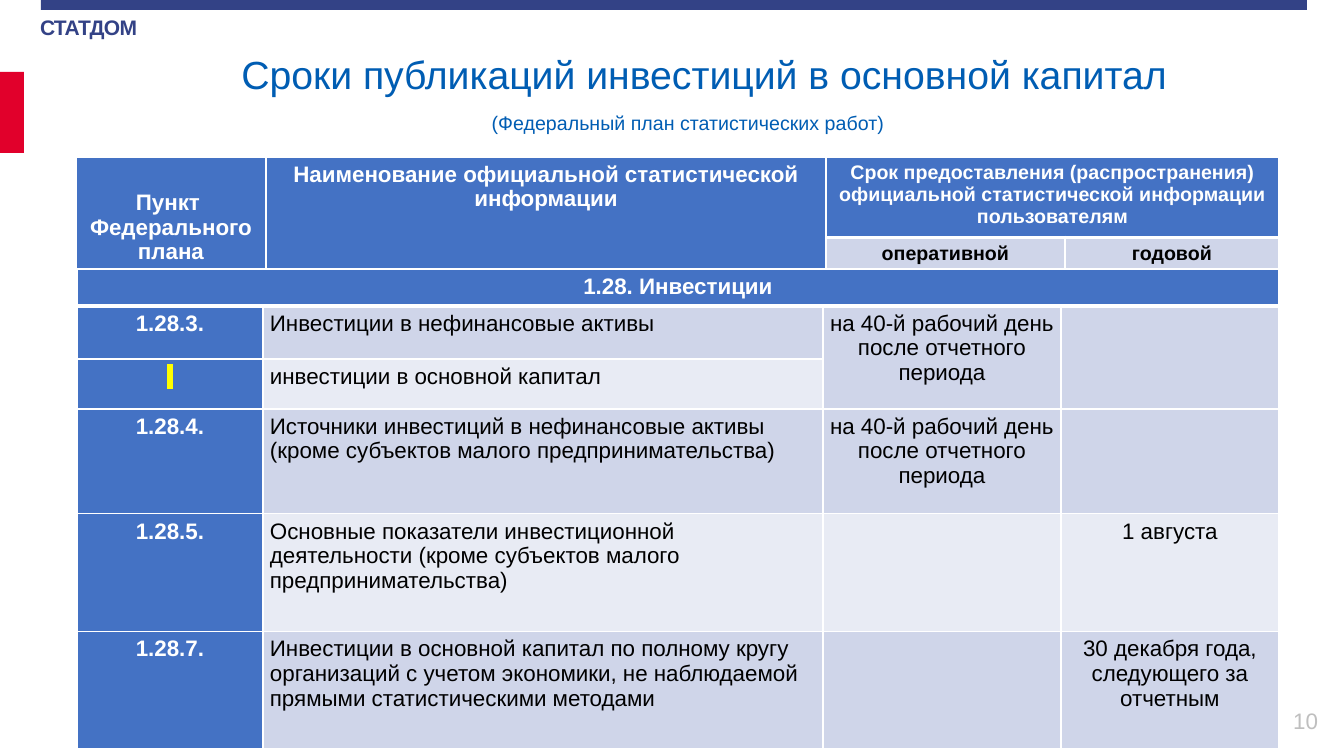
import pptx
import pptx.dml.color
import pptx.enum.shapes
import pptx.enum.text
import pptx.oxml
import pptx.oxml.ns
import pptx.util
import lxml.etree
from dataclasses import dataclass


@dataclass(frozen=True)
class Theme:
    font: str = "Arial"
    navy: str = "334286"
    red: str = "E1002B"
    title: str = "005DB3"
    blue: str = "4472C4"
    band: str = "CFD5E9"
    pale: str = "E8EBF4"
    white: str = "FFFFFF"
    black: str = "000000"
    gray: str = "BFBFBF"
    yellow: str = "FFFF00"
    title_size: int = 28
    body_size: int = 16
    logo_size: int = 15
    small_size: int = 14


theme = Theme()
PX = 914400 / 100.8
ALIGN = pptx.enum.text.PP_ALIGN
ANCHOR = pptx.enum.text.MSO_ANCHOR
qn = pptx.oxml.ns.qn


def add_span(para, text, size, color, bold=False):
    span = para.add_run()
    span.text = text
    span.font.name = theme.font
    span.font.size = pptx.util.Pt(size)
    span.font.bold = bold
    span.font.color.rgb = pptx.dml.color.RGBColor.from_string(color)
    return span


def add_grid(page, left, top, columns, rows, cells):
    frame = page.shapes.add_table(len(rows), len(columns), round(left * PX), round(top * PX),
                                  round(sum(columns) * PX), round(sum(rows) * PX))
    grid = frame.table
    grid.horz_banding = False
    for column, width in zip(grid.columns, columns):
        column.width = round(width * PX)
    for row, height in zip(grid.rows, rows):
        row.height = round(height * PX)
    for row, col, row_span, col_span, lines, fill, color, bold, size, align in cells:
        cell = grid.cell(row, col)
        if row_span * col_span > 1:
            cell.merge(grid.cell(row + row_span - 1, col + col_span - 1))
        cell.margin_left = cell.margin_right = round(7 * PX)
        cell.margin_top = cell.margin_bottom = round(5 * PX)
        properties = cell._tc.get_or_add_tcPr()
        for side in ("lnL", "lnR", "lnT", "lnB"):
            thick = (side == "lnT" and row == 1) or (side == "lnB" and row + row_span == 1)
            line = lxml.etree.SubElement(properties, qn("a:" + side), w=str(38100 if thick else 12192))
            paint = lxml.etree.SubElement(line, qn("a:solidFill"))
            lxml.etree.SubElement(paint, qn("a:srgbClr"), val=theme.white)
        cell.fill.solid()
        cell.fill.fore_color.rgb = pptx.dml.color.RGBColor.from_string(fill)
        for index, text in enumerate(lines):
            para = cell.text_frame.paragraphs[0] if index == 0 else cell.text_frame.add_paragraph()
            para.alignment = align
            add_span(para, text, size, color, bold)
    return grid


deck = pptx.Presentation()
deck.slide_width = round(1344 * PX)
deck.slide_height = round(756 * PX)
page = deck.slides.add_slide(deck.slide_layouts[6])

for left, top, width, height, color in ((41, 0, 1266, 10, theme.navy), (0, 72, 24, 81, theme.red)):
    bar = page.shapes.add_shape(pptx.enum.shapes.MSO_SHAPE.RECTANGLE, round(left * PX),
                                round(top * PX), round(width * PX), round(height * PX))
    bar.shadow.inherit = False
    bar.fill.solid()
    bar.fill.fore_color.rgb = pptx.dml.color.RGBColor.from_string(color)
    bar.line.fill.background()

frames = {}
for name, left, top, width, height in (("agency", 40, 14, 116, 26), ("title", 149, 43, 1078, 99),
                                       ("number", 1026, 701, 302, 40)):
    box = page.shapes.add_textbox(round(left * PX), round(top * PX), round(width * PX), round(height * PX))
    frames[name] = box.text_frame
    frames[name].word_wrap = True
    frames[name].vertical_anchor = ANCHOR.MIDDLE

agency = frames["agency"]
agency.vertical_anchor = ANCHOR.TOP
agency.margin_left = agency.margin_right = agency.margin_bottom = 0
agency.margin_top = round(PX)
span = add_span(agency.paragraphs[0], "СТАТДОМ", theme.logo_size, theme.navy, True)
span.font._element.set("spc", "-50")

para = frames["title"].paragraphs[0]
para.alignment = ALIGN.CENTER
para._p.get_or_add_pPr().set("marL", str(round(32 * PX)))
add_span(para, "Сроки публикаций инвестиций в основной капитал", theme.title_size, theme.title)
para = frames["title"].add_paragraph()
para.alignment = ALIGN.CENTER
para.space_before = pptx.util.Pt(10)
add_span(para, "(Федеральный план статистических работ)", theme.small_size, theme.title)

para = frames["number"].paragraphs[0]
para.alignment = ALIGN.RIGHT
add_span(para, "10", theme.body_size, theme.gray)

head = (theme.blue, theme.white, True, theme.body_size, ALIGN.CENTER)
small_head = (theme.blue, theme.white, True, theme.small_size, ALIGN.CENTER)
sub_head = (theme.band, theme.black, True, theme.small_size, ALIGN.CENTER)
header = add_grid(page, 76, 157, (190, 560, 239, 214), (80, 94), (
    (0, 0, 2, 1, ["Пункт ", "Федерального плана"], *head),
    (0, 1, 2, 1, ["Наименование официальной статистической информации"], *head),
    (0, 2, 1, 2, ["Срок предоставления (распространения) официальной статистической информации пользователям"],
     *small_head),
    (1, 2, 1, 1, ["оперативной"], *sub_head),
    (1, 3, 1, 1, ["годовой"], *sub_head),
))
header.cell(0, 0).margin_top = round(33 * PX)

workday = "на 40-й рабочий день после отчетного периода"
indicators = (
    ("1.28.3.", "Инвестиции в нефинансовые активы", workday, "", 2),
    (" ", "инвестиции в основной капитал", None, None, 1),
    ("1.28.4.", "Источники инвестиций в нефинансовые активы (кроме субъектов малого предпринимательства)",
     workday, "", 1),
    ("1.28.5.", "Основные показатели инвестиционной деятельности (кроме субъектов малого предпринимательства)",
     "", "1 августа", 1),
    ("1.28.7.", "Инвестиции в основной капитал по полному кругу организаций с учетом экономики, "
     "не наблюдаемой прямыми статистическими методами", "", "30 декабря года, следующего за отчетным", 1),
)
cells = [(0, 0, 1, 4, ["1.28. Инвестиции"], *head)]
for row, (item, title, current, annual, row_span) in enumerate(indicators, 1):
    body = (theme.band if row % 2 else theme.pale, theme.black, False, theme.body_size)
    cells.append((row, 0, 1, 1, [item], *head))
    cells.append((row, 1, 1, 1, [title], *body, ALIGN.LEFT))
    for col, term in ((2, current), (3, annual)):
        if term is not None:
            cells.append((row, col, row_span, 1, [term] if term else [], *body, ALIGN.CENTER))
schedule = add_grid(page, 77, 269, (186, 560, 238, 218), (37, 53, 50, 105, 118, 117), cells)

marked = schedule.cell(2, 0).text_frame.paragraphs[0].runs[0].font._element
highlight = lxml.etree.Element(qn("a:highlight"))
lxml.etree.SubElement(highlight, qn("a:srgbClr"), val=theme.yellow)
marked.find(qn("a:solidFill")).addnext(highlight)

deck.save("out.pptx")
